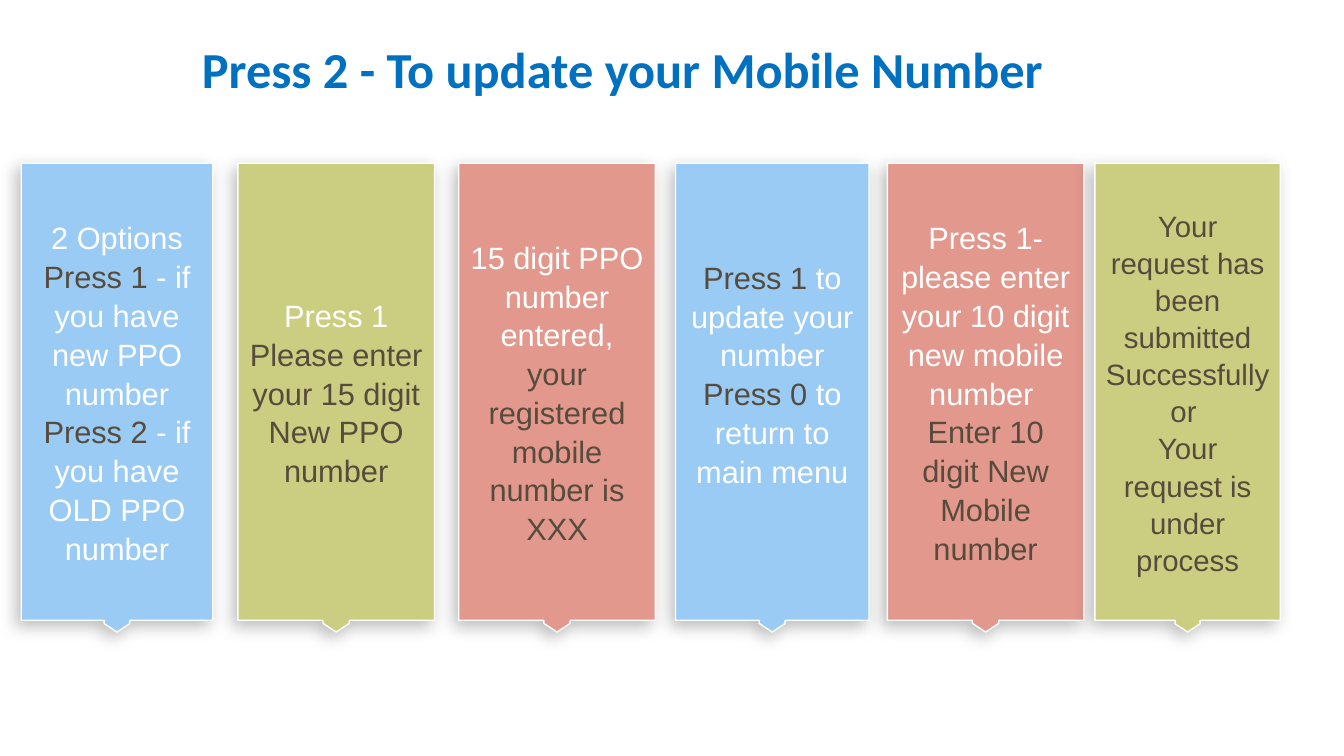
from lxml.etree import SubElement
from pptx import Presentation
from pptx.dml.color import RGBColor
from pptx.enum.shapes import MSO_SHAPE as Shape
from pptx.enum.text import MSO_ANCHOR as Anchor, PP_ALIGN as Align
from pptx.oxml.ns import qn
from pptx.util import Inches, Pt

SLIDE_WIDTH, SLIDE_HEIGHT = Inches(13.33), Inches(7.5)
BLUE, GREEN, RED = "9ACBF4", "CBCE81", "E2988C"
WHITE, BROWN, TITLE_BLUE = "FFFFFF", "564B3C", "0070C0"
STEP_TOP, STEP_HEIGHT = 21.6, 62
CALLOUT_PROPORTIONS = (0.25, 0.067, 0.044, 0.975)

# Left and width in percent of the slide, fill, text size, paragraphs of (text, colour) runs
STEPS = [
    (1.58, 14.25, BLUE, 22, [
        [("2 Options", WHITE)],
        [("Press 1 ", BROWN), ("- if you have new PPO number", WHITE)],
        [("Press 2", BROWN), (" - if you have OLD PPO number", WHITE)]]),
    (17.7, 14.63, GREEN, 22, [
        [("Press 1", WHITE)],
        [("Please enter your 15 digit New PPO number", BROWN)]]),
    (34.13, 14.63, RED, 22, [
        [("15 digit PPO number entered, ", WHITE),
         ("your registered mobile number is XXX", BROWN)]]),
    (50.26, 14.4, BLUE, 22, [
        [("Press 1", BROWN), (" to update your number", WHITE)],
        [("Press 0", BROWN), (" to return to main menu", WHITE)]]),
    (66.02, 14.63, RED, 22, [
        [("Press 1- please enter your 10 digit new mobile number ", WHITE)],
        [("Enter 10 digit New Mobile number", BROWN)]]),
    (81.47, 13.8, GREEN, 21, [
        [("Your request has been submitted Successfully", BROWN)],
        [("or ", BROWN)],
        [("Your request is under process", BROWN)]]),
]
RAISED_STEP = 3  # its text sits half a line above the middle


def rgb(hex_code):
    return RGBColor.from_string(hex_code)


def area(left, top, width, height):
    """Turn percentages of the slide into lengths."""
    return (int(SLIDE_WIDTH * left / 100), int(SLIDE_HEIGHT * top / 100),
            int(SLIDE_WIDTH * width / 100), int(SLIDE_HEIGHT * height / 100))


def write(frame, paragraphs, size, font="Arial", bold=False,
          anchor=Anchor.MIDDLE, spacing=1.0):
    frame.word_wrap = True
    frame.vertical_anchor = anchor
    for index, runs in enumerate(paragraphs):
        paragraph = frame.add_paragraph() if index else frame.paragraphs[0]
        paragraph.alignment = Align.CENTER
        paragraph.line_spacing = spacing
        for text, color in runs:
            run = paragraph.add_run()
            run.text = text
            run.font.name, run.font.size, run.font.bold = font, Pt(size), bold
            run.font.color.rgb = rgb(color)


def add_soft_shadow(shape):
    shape.shadow.inherit = False
    effects = shape._element.spPr.find(qn("a:effectLst"))
    shadow = SubElement(effects, qn("a:outerShdw"), blurRad=str(Pt(12)),
                        dist=str(Pt(5)), dir=str(135 * 60000), rotWithShape="0")
    black = SubElement(shadow, qn("a:srgbClr"), val="000000")
    SubElement(black, qn("a:alpha"), val="26000")


def add_step(slide, left, width, fill, size, paragraphs):
    step = slide.shapes.add_shape(Shape.DOWN_ARROW_CALLOUT,
                                  *area(left, STEP_TOP, width, STEP_HEIGHT))
    for index, proportion in enumerate(CALLOUT_PROPORTIONS):
        step.adjustments[index] = proportion
    step.fill.solid()
    step.fill.fore_color.rgb = rgb(fill)
    step.line.color.rgb = rgb(WHITE)
    step.line.width = Pt(1)
    add_soft_shadow(step)
    write(step.text_frame, paragraphs, size, spacing=1.05)
    return step


def add_title(slide, text):
    title = slide.shapes.add_textbox(*area(0.9, 4.4, 90.85, 13.07))
    write(title.text_frame, [[(text, TITLE_BLUE)]], 36, font="Calibri",
          bold=True, anchor=Anchor.TOP)


def main():
    deck = Presentation()
    deck.slide_width, deck.slide_height = SLIDE_WIDTH, SLIDE_HEIGHT
    slide = deck.slides.add_slide(deck.slide_layouts[6])
    add_title(slide, "Press 2 - To update your Mobile Number")
    steps = [add_step(slide, *step) for step in STEPS]
    steps[RAISED_STEP].text_frame.margin_bottom = Inches(0.42)
    deck.save("out.pptx")


if __name__ == "__main__":
    main()
